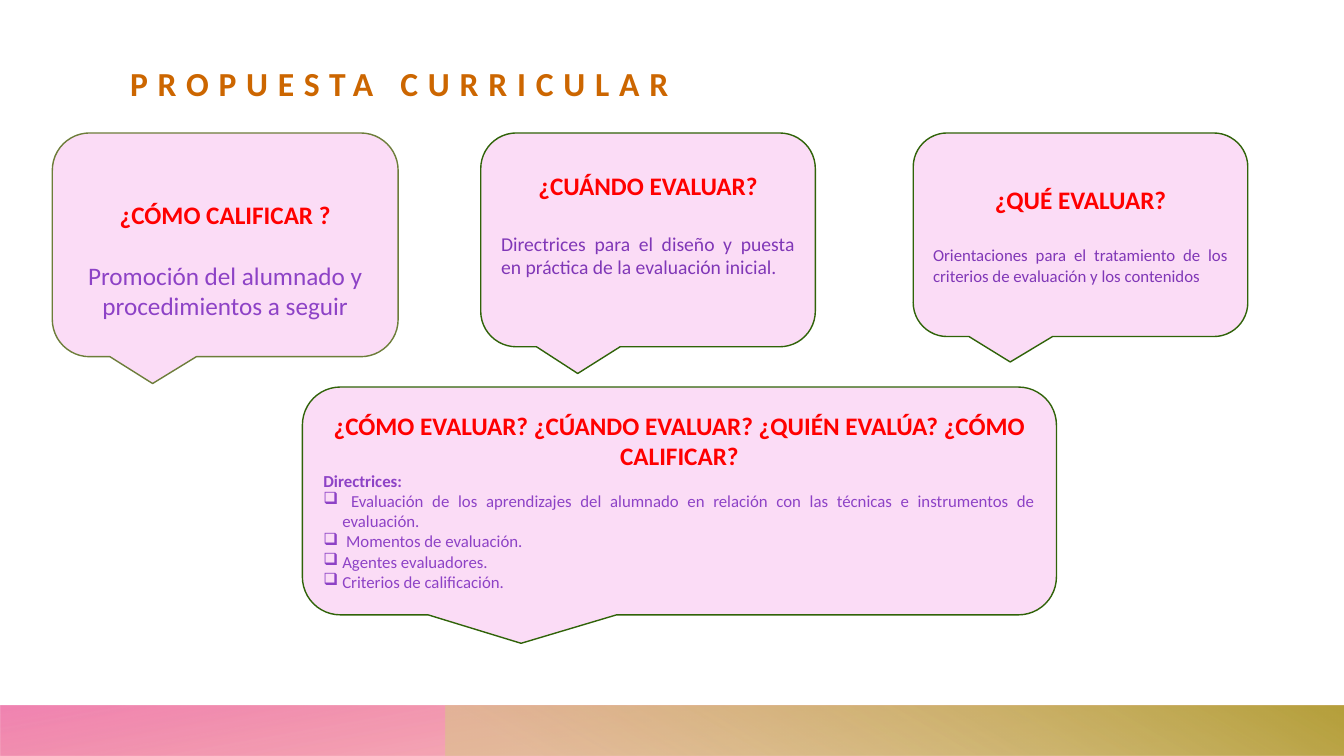
"""Build the "Propuesta curricular" slide with its four evaluation callouts."""
from dataclasses import dataclass

from lxml.etree import SubElement
from pptx import Presentation
from pptx.dml.color import RGBColor
from pptx.enum.shapes import MSO_SHAPE as Preset
from pptx.enum.text import MSO_ANCHOR as Anchor, MSO_AUTO_SIZE as AutoSize, PP_ALIGN as Align
from pptx.oxml import parse_xml
from pptx.oxml.ns import nsdecls, qn
from pptx.util import Pt

FONT = "Calibri"
BLANK_LINE = 22
INSET = 3.6
COLORS = {
    "title": "CC6600",
    "heading": "FF0000",
    "violet": "8D42C6",
    "purple": "8037B7",
    "callout": "FBDCF6",
    "olive": "6D7D3A",
    "green": "306309",
    "coral": "EB4E4F",
    "pink": "EE6EA5",
    "sand": "D7C986",
    "gold": "B6A03C",
}


@dataclass(frozen=True)
class Band:
    left: float
    width: float
    rotation: int
    angle: int
    stops: tuple[tuple[int, str, int], ...]


@dataclass(frozen=True)
class Line:
    text: str
    size: float
    color: str
    align: Align = Align.JUSTIFY
    bold: bool = False
    bullet: bool = False
    space_before: float = 0


@dataclass(frozen=True)
class Callout:
    left: float
    top: float
    width: float
    height: float
    outline: str
    lines: tuple[Line, ...]
    extra_top: float = 0
    extra_bottom: float = 0
    tip: tuple[float, float] = (-0.21, 0.625)


def heading(text: str) -> Line:
    """Return a centred red callout heading."""
    return Line(text, 18, "heading", Align.CENTER, bold=True)


def bullet(text: str) -> Line:
    """Return a checkbox list item."""
    return Line(text, 12, "violet", bullet=True)


BANDS = (
    Band(0, 960, 180, 100, ((14, "coral", 28), (100, "pink", 85))),
    Band(318, 642, 0, 240, ((9, "sand", 55), (99, "gold", 100))),
)
CALLOUTS = (
    Callout(37.4, 95, 247, 159.8, "olive", (
        heading("¿CÓMO CALIFICAR ?"),
        Line("Promoción del alumnado y procedimientos a seguir", 18, "violet",
             Align.CENTER, space_before=BLANK_LINE),
    ), extra_top=BLANK_LINE, tip=(-0.21, 0.62)),
    Callout(343.4, 95, 239, 152.7, "green", (
        heading("¿CUÁNDO EVALUAR?"),
        Line("Directrices para el diseño y puesta en práctica de la evaluación inicial.",
             14, "purple", space_before=BLANK_LINE),
    ), extra_bottom=BLANK_LINE),
    Callout(652.3, 95, 239, 145.4, "green", (
        heading("¿QUÉ EVALUAR?"),
        Line("Orientaciones para el tratamiento de los criterios de evaluación y los contenidos",
             12, "purple", space_before=BLANK_LINE),
    )),
    Callout(216, 276.5, 538.6, 162.7, "green", (
        heading("¿CÓMO EVALUAR? ¿CÚANDO EVALUAR? ¿QUIÉN EVALÚA? ¿CÓMO CALIFICAR?"),
        Line("Directrices:", 12, "violet", bold=True),
        bullet(" Evaluación de los aprendizajes del alumnado en relación con las técnicas "
               "e instrumentos de evaluación."),
        bullet(" Momentos de evaluación."),
        bullet("Agentes evaluadores."),
        bullet("Criterios de calificación."),
    )),
)


def rgb(name: str) -> RGBColor:
    """Look up a named colour."""
    return RGBColor.from_string(COLORS[name])


def add_run(paragraph, text: str, size: float, color: str, bold: bool):
    """Append a formatted run to a paragraph."""
    run = paragraph.add_run()
    run.text = text
    run.font.name = FONT
    run.font.size = Pt(size)
    run.font.bold = bold
    run.font.color.rgb = rgb(color)
    return run


def add_band(slide, band: Band) -> None:
    """Draw a mirrored gradient band along the bottom edge."""
    shape = slide.shapes.add_shape(Preset.RECTANGLE, Pt(band.left), Pt(504), Pt(band.width), Pt(36))
    shape.shadow.inherit = False
    shape.line.fill.background()
    shape.rotation = band.rotation
    properties = shape._element.spPr
    properties.find(qn("a:xfrm")).set("flipH", "1")
    stops = "".join(
        f'<a:gs pos="{position * 1000}"><a:srgbClr val="{COLORS[color]}">'
        f'<a:alpha val="{alpha * 1000}"/></a:srgbClr></a:gs>'
        for position, color, alpha in band.stops
    )
    gradient = parse_xml(
        f'<a:gradFill {nsdecls("a")} rotWithShape="1"><a:gsLst>{stops}</a:gsLst>'
        f'<a:lin ang="{band.angle * 60000}" scaled="0"/></a:gradFill>'
    )
    properties.find(qn("a:prstGeom")).addnext(gradient)


def add_title(slide) -> None:
    """Fill and place the title placeholder."""
    title = slide.shapes.title
    title.left, title.top, title.width, title.height = Pt(92.9), Pt(34.6), Pt(450), Pt(38.9)
    frame = title.text_frame
    frame.auto_size = AutoSize.NONE
    frame.vertical_anchor = Anchor.BOTTOM
    frame.margin_left = frame.margin_right = frame.margin_top = frame.margin_bottom = 0
    paragraph = frame.paragraphs[0]
    paragraph.alignment = Align.LEFT
    run = add_run(paragraph, "PROPUESTA CURRICULAR", 24, "title", True)
    run.font._element.set("spc", "700")


def add_callout(slide, callout: Callout) -> None:
    """Draw a speech callout with its lines of text."""
    shape = slide.shapes.add_shape(Preset.ROUNDED_RECTANGULAR_CALLOUT, Pt(callout.left),
                                   Pt(callout.top), Pt(callout.width), Pt(callout.height))
    shape.shadow.inherit = False
    shape.adjustments[0], shape.adjustments[1] = callout.tip
    shape.fill.solid()
    shape.fill.fore_color.rgb = rgb("callout")
    shape.line.color.rgb = rgb(callout.outline)
    shape.line.width = Pt(1)
    frame = shape.text_frame
    frame.word_wrap = True
    frame.vertical_anchor = Anchor.MIDDLE
    frame.margin_top = Pt(INSET + callout.extra_top)
    frame.margin_bottom = Pt(INSET + callout.extra_bottom)
    for index, line in enumerate(callout.lines):
        paragraph = frame.add_paragraph() if index else frame.paragraphs[0]
        paragraph.alignment = line.align
        if line.space_before:
            paragraph.space_before = Pt(line.space_before)
        if line.bullet:
            properties = paragraph._p.get_or_add_pPr()
            properties.set("marL", str(Pt(13.5)))
            properties.set("indent", str(-Pt(13.5)))
            SubElement(properties, qn("a:buChar")).set("char", "❑")
        add_run(paragraph, line.text, line.size, line.color, line.bold)


def main() -> None:
    """Assemble and save the slide."""
    presentation = Presentation()
    presentation.slide_width, presentation.slide_height = Pt(960), Pt(540)
    slide = presentation.slides.add_slide(presentation.slide_layouts[5])
    for band in BANDS:
        add_band(slide, band)
    add_title(slide)
    for callout in CALLOUTS:
        add_callout(slide, callout)
    presentation.save("out.pptx")


if __name__ == "__main__":
    main()
